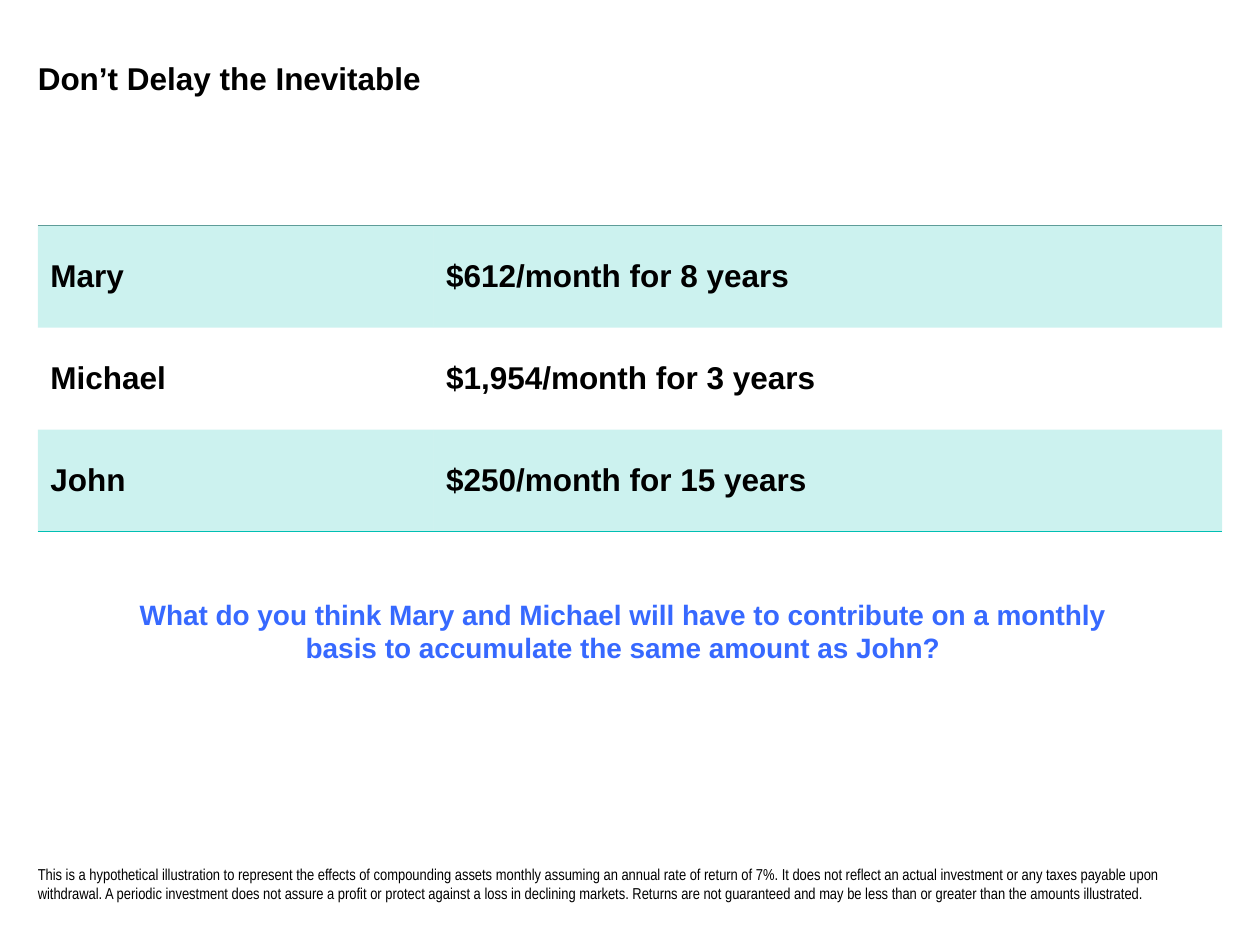
from pptx import Presentation
from pptx.dml.color import RGBColor
from pptx.enum.text import MSO_ANCHOR, PP_ALIGN
from pptx.oxml import parse_xml
from pptx.oxml.ns import nsdecls, qn
from pptx.util import Inches, Pt

TOP, MIDDLE, BOTTOM = MSO_ANCHOR.TOP, MSO_ANCHOR.MIDDLE, MSO_ANCHOR.BOTTOM
LEFT, CENTER = PP_ALIGN.LEFT, PP_ALIGN.CENTER

BLACK = RGBColor(0x00, 0x00, 0x00)
BLUE = RGBColor(0x37, 0x69, 0xFF)
TEAL = RGBColor(0x00, 0xBF, 0xB3)
GREY = RGBColor(0x5E, 0x9C, 0x98)


class Deck:
    font = "Arial"
    tint = 20  # opacity of the row bands, in percent

    def __init__(self):
        self.prs = Presentation()
        self.prs.slide_width = Inches(10)
        self.prs.slide_height = Inches(7.5)
        self.slide = self.prs.slides.add_slide(self.prs.slide_layouts[5])

    def add_run(self, frame, text, size, color=BLACK, bold=True, font=None, align=LEFT):
        para = frame.paragraphs[0]
        para.alignment = align
        run = para.add_run()
        run.text = text
        run.font.name = font or self.font
        run.font.size = Pt(size)
        run.font.bold = bold
        run.font.color.rgb = color

    def place(self, shape, box, anchor=TOP, inset=True):
        shape.left, shape.top, shape.width, shape.height = map(Inches, box)
        frame = shape.text_frame
        frame.word_wrap = True
        frame.vertical_anchor = anchor
        if not inset:
            frame.margin_left = frame.margin_right = 0
            frame.margin_top = frame.margin_bottom = 0
        return frame

    def title(self, text, box, size):
        frame = self.place(self.slide.shapes.title, box, inset=False)
        self.add_run(frame, text, size)

    def text(self, text, box, size, anchor=TOP, inset=True, **style):
        shape = self.slide.shapes.add_textbox(0, 0, 0, 0)
        frame = self.place(shape, box, anchor, inset)
        self.add_run(frame, text, size, **style)

    def edges(self, cell, **lines):
        props = cell._tc.get_or_add_tcPr()
        for spot, side in enumerate("LRTB"):
            color = lines.get(side)
            paint = (f'<a:solidFill><a:srgbClr val="{color}"/></a:solidFill>'
                     if color else "<a:noFill/>")
            props.insert(spot, parse_xml(
                f'<a:ln{side} {nsdecls("a")} w="{Pt(1)}">{paint}</a:ln{side}>'))

    def band(self, cell):
        cell.fill.solid()
        cell.fill.fore_color.rgb = TEAL
        color = cell._tc.tcPr.find(qn("a:solidFill"))[0]
        color.append(parse_xml(
            f'<a:alpha {nsdecls("a")} val="{self.tint * 1000}"/>'))

    def table(self, rows, box, widths, heights, size):
        table = self.slide.shapes.add_table(
            len(rows), len(widths), *map(Inches, box)).table
        table.first_row = table.horz_banding = False
        for col, width in zip(table.columns, widths):
            col.width = Inches(width)
        for row, height in zip(table.rows, heights):
            row.height = Inches(height)
        last = len(rows) - 1
        for r, row in enumerate(rows):
            for c, text in enumerate(row):
                cell = table.cell(r, c)
                cell.vertical_anchor = MIDDLE
                if text:
                    self.add_run(cell.text_frame, text, size)
                if r % 2:
                    self.band(cell)
                else:
                    cell.fill.background()
                self.edges(cell, T=GREY if r == 1 else None,
                           B={0: GREY, last: TEAL}.get(r))


def main():
    deck = Deck()

    # Title
    deck.title("Don’t Delay the Inevitable", (0.3, 0.47, 7, 0.41), 18)

    # Savings table, with an empty header row
    rows = [
        ("", ""),
        ("Mary", "$612/month for 8 years"),
        ("Michael", "$1,954/month for 3 years"),
        ("John", "$250/month for 15 years"),
    ]
    deck.table(rows, (0.3, 1.08, 9.4, 3.14), (3.14, 6.26), [0.71] + [0.81] * 3, 18)

    # Question
    deck.text("What do you think Mary and Michael will have to contribute on a "
              "monthly basis to accumulate the same amount as John?",
              (0.89, 4.69, 8.11, 0.73), 16, color=BLUE, align=CENTER)

    # Disclaimer
    deck.text("This is a hypothetical illustration to represent the effects of "
              "compounding assets monthly assuming an annual rate of return of 7%. "
              "It does not reflect an actual investment or any taxes payable upon "
              "withdrawal. A periodic investment does not assure a profit or protect "
              "against a loss in declining markets. Returns are not guaranteed and "
              "may be less than or greater than the amounts illustrated.",
              (0.3, 6.67, 9.3, 0.49), 9, BOTTOM, False,
              bold=False, font="Arial Narrow")

    deck.prs.save("out.pptx")


if __name__ == "__main__":
    main()
